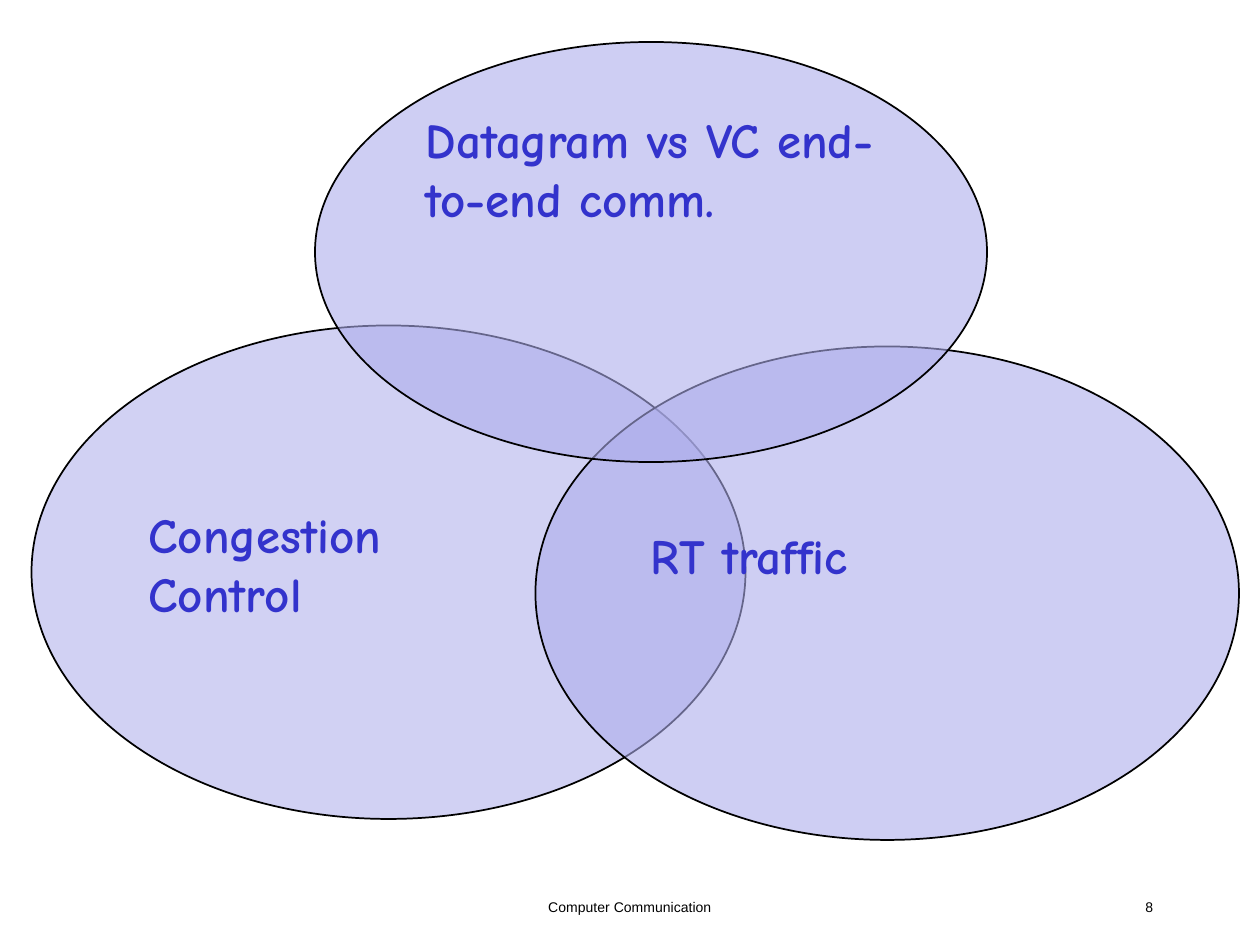
from pptx import Presentation, util as u
from pptx.dml.color import RGBColor
from pptx.enum import shapes, text
from lxml import etree

THEME = {
    "fill": RGBColor.from_string("ADADEB"),
    "line": RGBColor.from_string("000000"),
    "topic": ("Comic Neue", 28, True, RGBColor.from_string("3333CC")),
    "footer": ("Arial", 8, False, RGBColor.from_string("000000")),
}
DRAWING = "{http://schemas.openxmlformats.org/drawingml/2006/main}"

deck = Presentation()
deck.slide_width, deck.slide_height = u.Inches(10), u.Inches(7.5)
page = deck.slides.add_slide(deck.slide_layouts[6])

# Grid: 120 columns and 90 rows
COLUMN = deck.slide_width / 120
ROW = deck.slide_height / 90


def place(left, top, width, height):
    return int(left * COLUMN), int(top * ROW), int(width * COLUMN), int(height * ROW)


def write(box, lines, style, align, inset_top=0.05):
    frame = box.text_frame
    frame.word_wrap = True
    frame.vertical_anchor = text.MSO_ANCHOR.TOP
    frame.margin_top = u.Inches(inset_top)
    frame.text = "\n".join(lines)
    for para in frame.paragraphs:
        para.alignment = align
        font = para.font
        font.name, size, font.bold, font.color.rgb = THEME[style]
        font.size = u.Pt(size)


# Overlapping topics, back to front: grid place, opacity %, top inset, lines
topics = [
    ((3, 31, 68, 47), 56, 0.85, ["Congestion", "Control"]),
    ((51, 33, 67, 47), 59, 0.85, ["RT traffic"]),
    ((30, 4, 64, 40), 59, 0.05, ["Datagram vs VC end-to-end comm."]),
]
for area, opacity, inset_top, lines in topics:
    oval = page.shapes.add_shape(shapes.MSO_SHAPE.OVAL, *place(*area))
    oval.shadow.inherit = False
    oval.fill.solid()
    oval.fill.fore_color.rgb = THEME["fill"]
    color = oval._element.spPr.find(f"{DRAWING}solidFill/{DRAWING}srgbClr")
    etree.SubElement(color, DRAWING + "alpha", val=str(opacity * 1000))
    oval.line.color.rgb = THEME["line"]
    oval.line.width = u.Pt(1)
    write(oval, lines, "topic", text.PP_ALIGN.LEFT, inset_top)

# Footer and page number
footers = [
    ((41, 85, 38, 3), "Computer Communication", text.PP_ALIGN.CENTER),
    ((86, 85, 25, 3), "8", text.PP_ALIGN.RIGHT),
]
for area, words, align in footers:
    box = page.shapes.add_textbox(*place(*area))
    write(box, [words], "footer", align)

deck.save("out.pptx")
